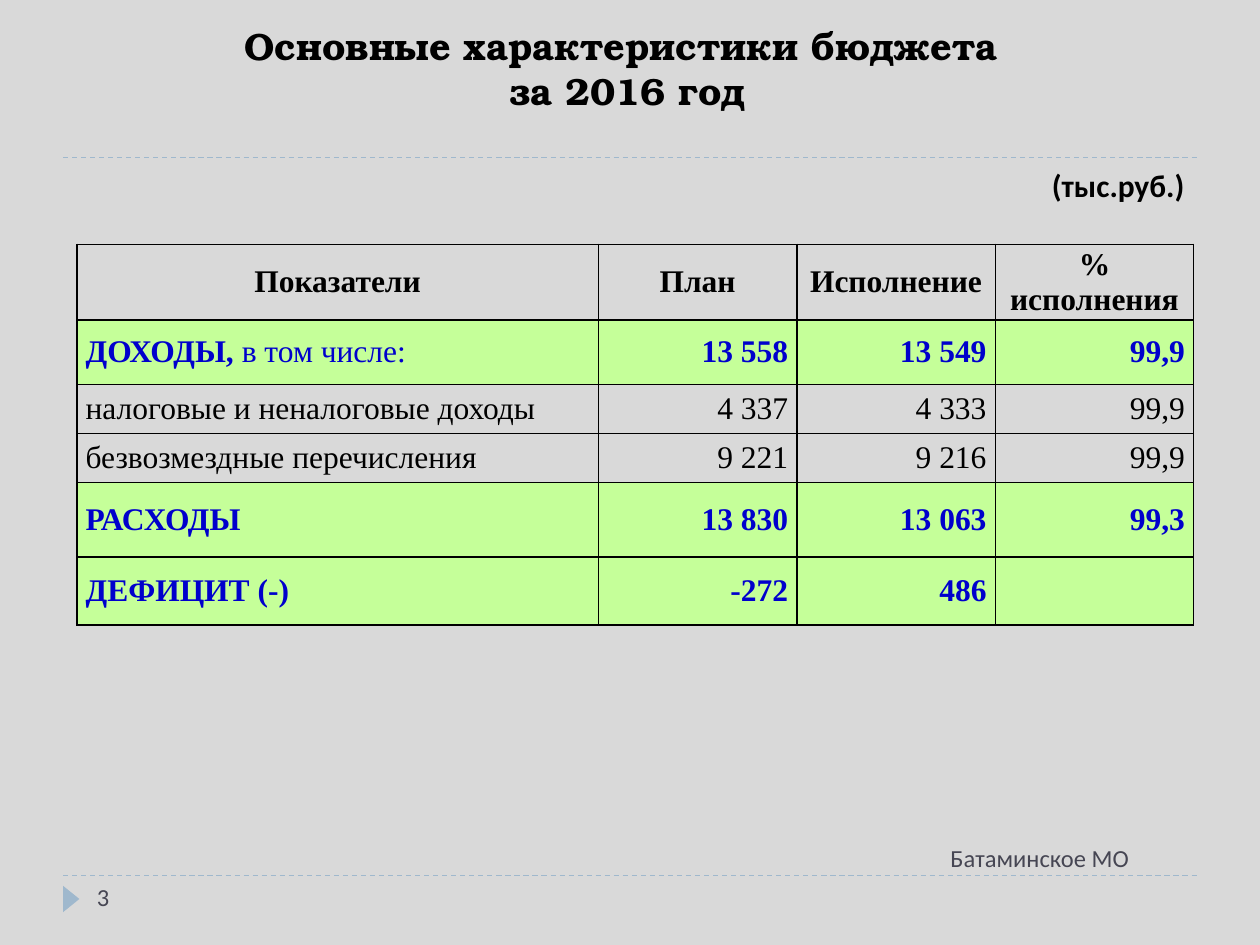
from dataclasses import dataclass

from lxml import etree
from pptx import Presentation
from pptx.dml.color import RGBColor
from pptx.enum.dml import MSO_LINE
from pptx.enum.shapes import MSO_CONNECTOR, MSO_SHAPE
from pptx.enum.text import MSO_ANCHOR, PP_ALIGN
from pptx.oxml.ns import qn
from pptx.util import Inches, Pt

LEFT, CENTER, RIGHT = PP_ALIGN.LEFT, PP_ALIGN.CENTER, PP_ALIGN.RIGHT
MIDDLE, BOTTOM = MSO_ANCHOR.MIDDLE, MSO_ANCHOR.BOTTOM
DASH = MSO_LINE.DASH
STRAIGHT = MSO_CONNECTOR.STRAIGHT
TRIANGLE = MSO_SHAPE.ISOSCELES_TRIANGLE
TITLE_ONLY = 5


@dataclass(frozen=True)
class Theme:
    background: str = "D9D9D9"
    ink: str = "000000"
    muted: str = "464653"
    accent: str = "9FB8CD"
    total_text: str = "0000CC"
    total_fill: str = "C5FF99"
    title_font: str = "TeX Gyre Bonum"
    body_font: str = "Calibri"
    table_font: str = "Times New Roman"
    title_size: float = 21.6
    body_size: float = 18
    footer_size: float = 14


class SlideBuilder:
    """Places elements on a grid of 100 columns by 75 rows."""

    COLUMNS, ROWS = 100, 75

    def __init__(self, presentation, theme):
        self.theme = theme
        self.column = presentation.slide_width / self.COLUMNS
        self.row = presentation.slide_height / self.ROWS
        self.slide = presentation.slides.add_slide(presentation.slide_layouts[TITLE_ONLY])
        fill = self.slide.background.fill
        fill.solid()
        fill.fore_color.rgb = RGBColor.from_string(theme.background)

    def box(self, left, top, width, height):
        return (round(left * self.column), round(top * self.row),
                round(width * self.column), round(height * self.row))

    @staticmethod
    def style(paragraph, font, size, color, bold=False, align=LEFT):
        paragraph.alignment = align
        paragraph.font.name = font
        paragraph.font.size = Pt(size)
        paragraph.font.bold = bold
        paragraph.font.color.rgb = RGBColor.from_string(color)

    def title(self, text, area):
        shape = self.slide.shapes.title
        shape.left, shape.top, shape.width, shape.height = self.box(*area)
        frame = shape.text_frame
        frame.text = text
        frame.vertical_anchor = BOTTOM
        self.style(frame.paragraphs[0], self.theme.title_font,
                   self.theme.title_size, self.theme.ink, True, CENTER)

    def text(self, text, area, size, color, bold=False, align=LEFT, wrap=True):
        frame = self.slide.shapes.add_textbox(*self.box(*area)).text_frame
        frame.word_wrap = wrap
        frame.text = text
        self.style(frame.paragraphs[0], self.theme.body_font, size, color, bold, align)

    def dashed_rule(self, left, right, top):
        x1, y, width, _ = self.box(left, top, right - left, 0)
        rule = self.slide.shapes.add_connector(STRAIGHT, x1, y, x1 + width, y)
        rule.line.color.rgb = RGBColor.from_string(self.theme.accent)
        rule.line.width = Pt(0.75)
        rule.line.dash_style = DASH
        etree.SubElement(rule._element.spPr, qn("a:effectLst"))

    def marker(self, area):
        shape = self.slide.shapes.add_shape(TRIANGLE, *self.box(*area))
        shape.rotation = 90
        shape.shadow.inherit = False
        shape.fill.solid()
        shape.fill.fore_color.rgb = RGBColor.from_string(self.theme.accent)
        shape.line.fill.background()

    def border(self, cell):
        properties = cell._tc.get_or_add_tcPr()
        for side in ("lnL", "lnR", "lnT", "lnB"):
            line = etree.SubElement(properties, qn(f"a:{side}"), w=str(Pt(1)))
            fill = etree.SubElement(line, qn("a:solidFill"))
            etree.SubElement(fill, qn("a:srgbClr"), val=self.theme.ink)

    def cell(self, cell, text, align, bold, total):
        cell.margin_left = cell.margin_right = Inches(0.07)
        cell.margin_top = cell.margin_bottom = 0
        cell.vertical_anchor = MIDDLE
        self.border(cell)
        if total:
            cell.fill.solid()
            cell.fill.fore_color.rgb = RGBColor.from_string(self.theme.total_fill)
        else:
            cell.fill.background()
        paragraph = cell.text_frame.paragraphs[0]
        color = self.theme.total_text if total else self.theme.ink
        self.style(paragraph, self.theme.table_font, self.theme.body_size, color, bold, align)
        # A pair holds a lead in the row's weight and a plain remainder
        lead, rest = text if isinstance(text, tuple) else (text, "")
        if lead:
            paragraph.add_run().text = lead
        if rest:
            run = paragraph.add_run()
            run.text = rest
            run.font.bold = False

    def table(self, records, left, top, widths, heights, total_rows):
        area = self.box(left, top, sum(widths), sum(heights))
        table = self.slide.shapes.add_table(len(heights), len(widths), *area).table
        table.first_row = table.horz_banding = False
        for column, width in zip(table.columns, widths):
            column.width = round(width * self.column)
        for row, height in zip(table.rows, heights):
            row.height = round(height * self.row)
        for i, record in enumerate(records):
            total = i in total_rows
            for j, text in enumerate(record):
                align = CENTER if i == 0 else RIGHT if j else LEFT
                self.cell(table.cell(i, j), text, align, total or i == 0, total)


BUDGET = [
    ("Показатели", "План", "Исполнение", "% исполнения"),
    (("ДОХОДЫ, ", "в том числе:"), "13 558", "13 549", "99,9"),
    ("налоговые и неналоговые доходы", "4 337", "4 333", "99,9"),
    ("безвозмездные перечисления", "9 221", "9 216", "99,9"),
    ("РАСХОДЫ", "13 830", "13 063", "99,3"),
    ("ДЕФИЦИТ (-)", "-272", "486", ""),
]


def main():
    presentation = Presentation()
    presentation.slide_width, presentation.slide_height = Inches(10), Inches(7.5)
    theme = Theme()
    builder = SlideBuilder(presentation, theme)

    # Frame: rules above and below the content, page marker
    for top in (69.5, 12.5):
        builder.dashed_rule(5, 95, top)
    builder.marker((4.6, 70.7, 2.1, 1.3))

    # Footer
    builder.text("Батаминское МО", (65.6, 66.4, 25, 4),
                 theme.footer_size, theme.muted, align=RIGHT)
    builder.text("3", (6.7, 69.5, 21.7, 4), theme.footer_size, theme.muted)

    # Budget table and its unit
    builder.table(BUDGET, 6.1, 19.4, [41.4] + [15.75] * 3,
                  [5.4, 5.1, 3.9, 3.9, 5.9, 5.4], total_rows={1, 4, 5})
    builder.text("(тыс.руб.)", (82.5, 12.7, 13.2, 4),
                 theme.body_size, theme.ink, bold=True, wrap=False)

    # Title
    builder.title("Основные характеристики бюджета \vза 2016 год", (4.8, 1.8, 90, 7.7))

    presentation.save("out.pptx")


if __name__ == "__main__":
    main()
